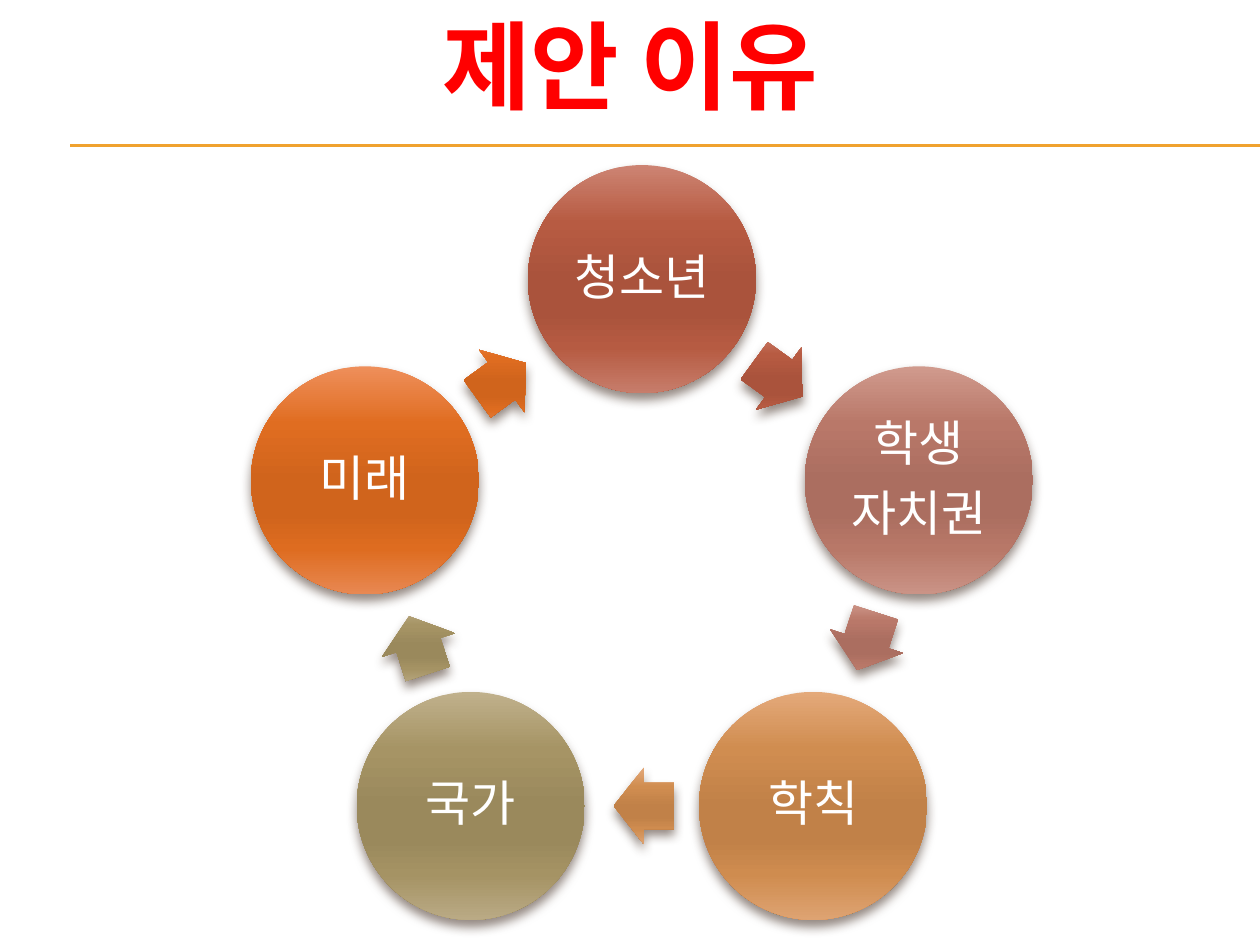
import math
import pptx
import pptx.util
import pptx.oxml
import pptx.oxml.ns
import pptx.dml.color
import pptx.enum.shapes
import pptx.enum.text

Pt = pptx.util.Pt
RGB = pptx.dml.color.RGBColor.from_string
KIND = pptx.enum.shapes.MSO_SHAPE
NS = pptx.oxml.ns.nsdecls("a")

# Gradients list their hex colours from top to bottom
COLORS = {
    "title": "FF0000",
    "label": "FFFFFF",
    "rule": "F0A22E",
    "shadow": "4E3B30",
    "red": "CD8473 B75B42 AA533C AA533C B65B42 C77D6B",
    "rose": "D09A8D B97869 AB6E60 AB6E60 B87868 CA9386",
    "amber": "E4A97A D08D50 C18148 C18148 CF8C4F DEA372",
    "olive": "C0B18C A69465 9A895C 9A895C A59364 BAAA85",
    "orange": "EE8F5B E06D21 D0641C D0641C DE6C20 E88852",
}
STOPS = (0, 25, 50, 65, 80, 100)


class Deck:
    font = "Cabin"

    def __init__(self, wide, high):
        self.show = pptx.Presentation()
        self.show.slide_width, self.show.slide_height = Pt(wide), Pt(high)
        self.slide = self.show.slides.add_slide(self.show.slide_layouts[6])

    def label(self, para, text, size, color, bold=False):
        para.alignment = pptx.enum.text.PP_ALIGN.CENTER
        run = para.add_run()
        run.text = text
        run.font.name, run.font.size, run.font.bold = self.font, Pt(size), bold
        run.font.color.rgb = RGB(COLORS[color])

    def title(self, text, wide, high, size):
        box = self.slide.shapes.add_textbox(0, 0, Pt(wide), Pt(high))
        box.text_frame.word_wrap = True
        self.label(box.text_frame.paragraphs[0], text, size, "title", True)

    def rule(self, left, right, y):
        line = self.slide.shapes.add_connector(
            pptx.enum.shapes.MSO_CONNECTOR.STRAIGHT,
            Pt(left), Pt(y), Pt(right), Pt(y))
        line.line.color.rgb = RGB(COLORS["rule"])
        line.line.width = Pt(0.75)
        line._element.spPr.append(pptx.oxml.parse_xml(f"<a:effectLst {NS}/>"))

    def glossy(self, kind, x, y, wide, high, color):
        """Add a shape centred on x, y with a gradient and a soft shadow."""
        shape = self.slide.shapes.add_shape(
            kind, Pt(x - wide / 2), Pt(y - high / 2), Pt(wide), Pt(high))
        shape.line.fill.background()
        stops = "".join(
            f'<a:gs pos="{pos * 1000}"><a:srgbClr val="{tone}"/></a:gs>'
            for pos, tone in zip(STOPS, COLORS[color].split()))
        props = shape._element.spPr
        props.find(pptx.oxml.ns.qn("a:prstGeom")).addnext(pptx.oxml.parse_xml(
            f'<a:gradFill {NS} rotWithShape="0"><a:gsLst>{stops}</a:gsLst>'
            '<a:lin ang="5400000" scaled="0"/></a:gradFill>'))
        props.append(pptx.oxml.parse_xml(
            f'<a:effectLst {NS}><a:outerShdw blurRad="{Pt(6)}" dist="{Pt(4)}" '
            'dir="5400000" rotWithShape="0">'
            f'<a:srgbClr val="{COLORS["shadow"]}"><a:alpha val="60000"/>'
            '</a:srgbClr></a:outerShdw></a:effectLst>'))
        return shape

    def disc(self, x, y, size, color, lines):
        frame = self.glossy(KIND.OVAL, x, y, size, size, color).text_frame
        frame.word_wrap = True
        frame.vertical_anchor = pptx.enum.text.MSO_ANCHOR.MIDDLE
        frame.margin_left = frame.margin_right = Pt(2.8)
        frame.margin_top = frame.margin_bottom = Pt(2.8)
        for i, text in enumerate(lines):
            para = frame.add_paragraph() if i else frame.paragraphs[0]
            para.line_spacing = 0.9
            self.label(para, text, 28, "label")
            # Space after as a share of the line
            para._p.get_or_add_pPr().append(pptx.oxml.parse_xml(
                f'<a:spcAft {NS}><a:spcPct val="35000"/></a:spcAft>'))

    def arrow(self, x, y, turn, color):
        shape = self.glossy(KIND.RIGHT_ARROW, x, y, 34.6, 44, color)
        shape.adjustments[0], shape.adjustments[1] = 0.6, 0.5
        shape.rotation = turn


def orbit(reach, turn):
    """Point on the cycle, turned clockwise from the top."""
    angle = math.radians(turn)
    return 366.8 + reach * math.sin(angle), 325.9 - reach * math.cos(angle)


def main():
    deck = Deck(720, 540)

    # Double rule under the title
    for y in (82.8, 83.5):
        deck.rule(40.3, 720, y)

    # Cycle of discs, each followed by an arrow
    cycle = (
        ("red", ["청소년"]),
        ("rose", ["학생", "자치권"]),
        ("amber", ["학칙"]),
        ("olive", ["국가"]),
        ("orange", ["미래"]),
    )
    step = 360 / len(cycle)
    reach = 166.4
    for i, (color, lines) in enumerate(cycle):
        turn = i * step
        deck.disc(*orbit(reach, turn), 130.3, color, lines)
        # Arrows sit halfway, a touch nearer the disc they leave
        half = turn + step / 2
        inner = reach * math.cos(math.radians(step / 2))
        deck.arrow(*orbit(inner, half - 0.5), half, color)

    # Title
    deck.title("제안 이유", 720, 74.2, 55)
    deck.show.save("out.pptx")


if __name__ == "__main__":
    main()
